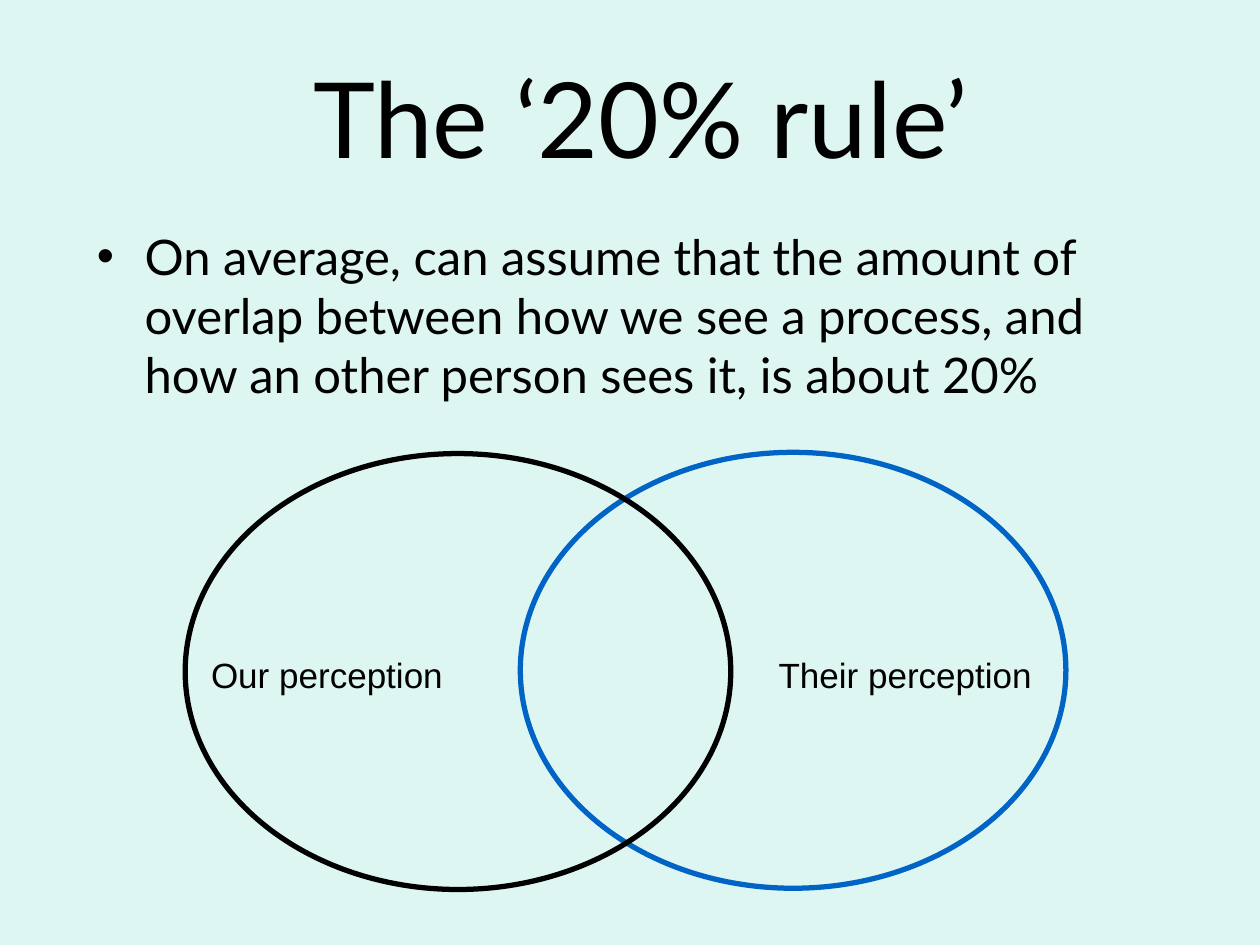
from lxml.etree import SubElement
from pptx import Presentation
from pptx.dml.color import RGBColor
from pptx.enum.shapes import MSO_SHAPE as Shape
from pptx.enum.text import MSO_ANCHOR as Anchor, PP_ALIGN as Align
from pptx.oxml.ns import qn
from pptx.util import Inches, Pt

BACKGROUND, BLACK, BLUE = "DEF6F1", "000000", "0063C6"
TITLE_ONLY = 5
LEFT, WIDTH = 0.67, 8.83
CIRCLE_WIDTH, CIRCLE_HEIGHT = 4.33, 3.46
LABEL_TOP, LABEL_HEIGHT = 5.14, 0.44


def color(hex_code):
    return RGBColor.from_string(hex_code)


def inches(*lengths):
    return [Inches(length) for length in lengths]


def add_bullet(paragraph, indent):
    properties = paragraph._p.get_or_add_pPr()
    properties.set("marL", str(Inches(indent)))
    properties.set("indent", str(-Inches(indent)))
    SubElement(properties, qn("a:buFont"), typeface="Arial")
    SubElement(properties, qn("a:buChar"), char="•")


def write(shape, text, size, font="Lato", align=Align.LEFT,
          anchor=Anchor.TOP, wrap=True, bullet_indent=None):
    frame = shape.text_frame
    frame.word_wrap = wrap
    frame.vertical_anchor = anchor
    frame.text = text
    paragraph = frame.paragraphs[0]
    paragraph.alignment = align
    if bullet_indent:
        add_bullet(paragraph, bullet_indent)
    paragraph.font.name = font
    paragraph.font.size = Pt(size)
    paragraph.font.color.rgb = color(BLACK)


def add_title(slide, text):
    title = slide.shapes.title
    title.left, title.top, title.width, title.height = inches(LEFT, 0.3, WIDTH, 1.25)
    write(title, text, 60, align=Align.CENTER, anchor=Anchor.MIDDLE)


def add_text(slide, box, text, size, **text_format):
    write(slide.shapes.add_textbox(*inches(*box)), text, size, **text_format)


def add_circle(slide, left, top, line, fill=None):
    circle = slide.shapes.add_shape(
        Shape.OVAL, *inches(left, top, CIRCLE_WIDTH, CIRCLE_HEIGHT))
    circle.shadow.inherit = False
    if fill:
        circle.fill.solid()
        circle.fill.fore_color.rgb = color(fill)
    else:
        circle.fill.background()
    circle.line.color.rgb = color(line)
    circle.line.width = Pt(3)


def add_label(slide, left, width, text):
    add_text(slide, (left, LABEL_TOP, width, LABEL_HEIGHT), text, 20,
             font="Arial", align=Align.CENTER, wrap=False)


def main():
    presentation = Presentation()
    presentation.slide_width, presentation.slide_height = inches(10, 7.5)
    slide = presentation.slides.add_slide(presentation.slide_layouts[TITLE_ONLY])
    slide.background.fill.solid()
    slide.background.fill.fore_color.rgb = color(BACKGROUND)

    add_title(slide, "The ‘20% rule’")
    add_text(slide, (LEFT, 1.75, WIDTH, 1.53),
             "On average, can assume that the amount of overlap between how we "
             "see a process, and how an other person sees it, is about 20%",
             28, bullet_indent=0.38)
    add_circle(slide, 4.13, 3.59, BLUE, fill=BACKGROUND)
    add_circle(slide, 1.47, 3.6, BLACK)
    add_label(slide, 1.57, 2.05, "Our perception")
    add_label(slide, 6.07, 2.23, "Their perception")
    presentation.save("out.pptx")


if __name__ == "__main__":
    main()
